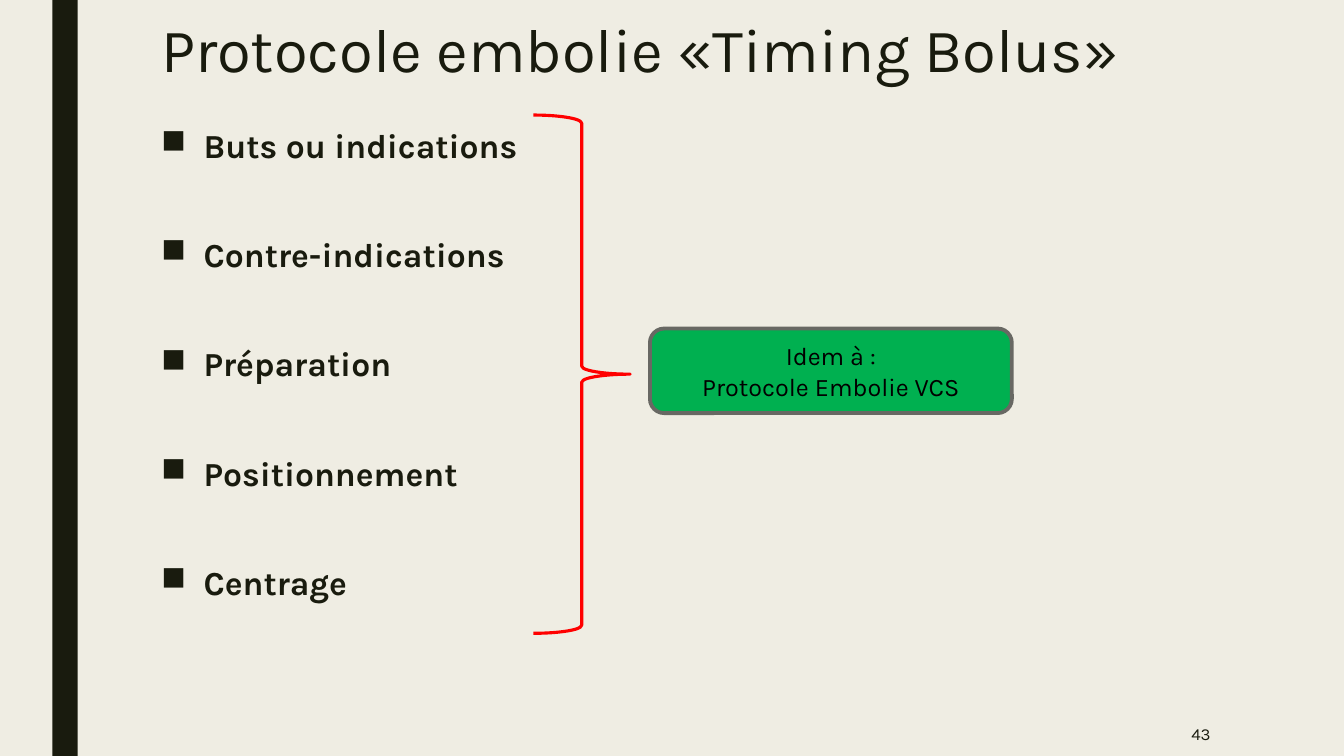
from lxml.etree import SubElement
from pptx import Presentation
from pptx.dml.color import RGBColor
from pptx.enum.shapes import MSO_SHAPE as Shape
from pptx.enum.text import MSO_ANCHOR as Anchor, PP_ALIGN as Align
from pptx.oxml.ns import qn
from pptx.util import Cm, Pt

CREAM = RGBColor(0xEF, 0xED, 0xE3)
INK = RGBColor(0x19, 0x1B, 0x0E)
RED = RGBColor(0xFF, 0x00, 0x00)
GREEN = RGBColor(0x00, 0xB0, 0x50)
GREY = RGBColor(0x68, 0x68, 0x63)
BLACK = RGBColor(0x00, 0x00, 0x00)

TOPICS = ["Buts ou indications", "Contre-indications", "Préparation", "Positionnement", "Centrage"]


class SlideBuilder:
    """Holds the font and the current slide, and adds each kind of element."""

    font = "Karla"
    bullet_indent = Cm(1.07)

    def __init__(self, slide):
        self.slide = slide

    def background(self, color):
        fill = self.slide.background.fill
        fill.solid()
        fill.fore_color.rgb = color

    def shape(self, kind, box, fill=None, line=None, width=0):
        shape = self.slide.shapes.add_shape(kind, *map(Cm, box))
        shape.shadow.inherit = False
        if fill is None:
            shape.fill.background()
        else:
            shape.fill.solid()
            shape.fill.fore_color.rgb = fill
        if line is None:
            shape.line.fill.background()
        else:
            shape.line.color.rgb = line
            shape.line.width = Pt(width)
        return shape

    def text_box(self, box, lines, size, **style):
        shape = self.slide.shapes.add_textbox(*map(Cm, box))
        self.add_text(shape, lines, size, **style)

    def add_text(self, shape, lines, size, color=INK, bold=False, align=Align.LEFT,
                 anchor=Anchor.TOP, spacing=1.0, gap=0, bullet=None):
        frame = shape.text_frame
        frame.word_wrap = True
        frame.vertical_anchor = anchor
        for index, line in enumerate(lines):
            paragraph = frame.add_paragraph() if index else frame.paragraphs[0]
            paragraph.alignment = align
            paragraph.line_spacing = spacing
            paragraph.space_after = Pt(gap)
            if bullet:
                self.add_bullet(paragraph, bullet)
            run = paragraph.add_run()
            run.text = line
            run.font.name = self.font
            run.font.size = Pt(size)
            run.font.bold = bold
            run.font.color.rgb = color

    def add_bullet(self, paragraph, character):
        properties = paragraph._p.get_or_add_pPr()
        properties.set("marL", str(self.bullet_indent))
        properties.set("indent", str(-self.bullet_indent))
        SubElement(properties, qn("a:buChar")).set("char", character)


def main():
    presentation = Presentation()
    presentation.slide_width = Cm(33.87)
    presentation.slide_height = Cm(19.05)
    builder = SlideBuilder(presentation.slides.add_slide(presentation.slide_layouts[6]))

    builder.background(CREAM)
    builder.shape(Shape.RECTANGLE, (1.32, 0, 0.64, 19.05), fill=INK)
    builder.text_box((3.81, 3.1, 9.63, 13.39), TOPICS, 24, bold=True,
                     spacing=0.94, gap=51, bullet="■")
    builder.text_box((26.31, 17.93, 4.45, 1.12), ["43"], 12,
                     align=Align.RIGHT, anchor=Anchor.MIDDLE)
    builder.text_box((3.81, 0.38, 26.67, 2.54), ["Protocole embolie «Timing Bolus»"], 44,
                     spacing=0.89)
    builder.shape(Shape.RIGHT_BRACE, (13.44, 2.9, 2.44, 13.06), line=RED, width=2.25)
    reference = builder.shape(Shape.ROUNDED_RECTANGLE, (16.38, 8.28, 9.12, 2.13),
                              fill=GREEN, line=GREY, width=2.75)
    builder.add_text(reference, ["Idem à :", "Protocole Embolie VCS"], 18, color=BLACK,
                     align=Align.CENTER, anchor=Anchor.MIDDLE)

    presentation.save("out.pptx")


if __name__ == "__main__":
    main()
